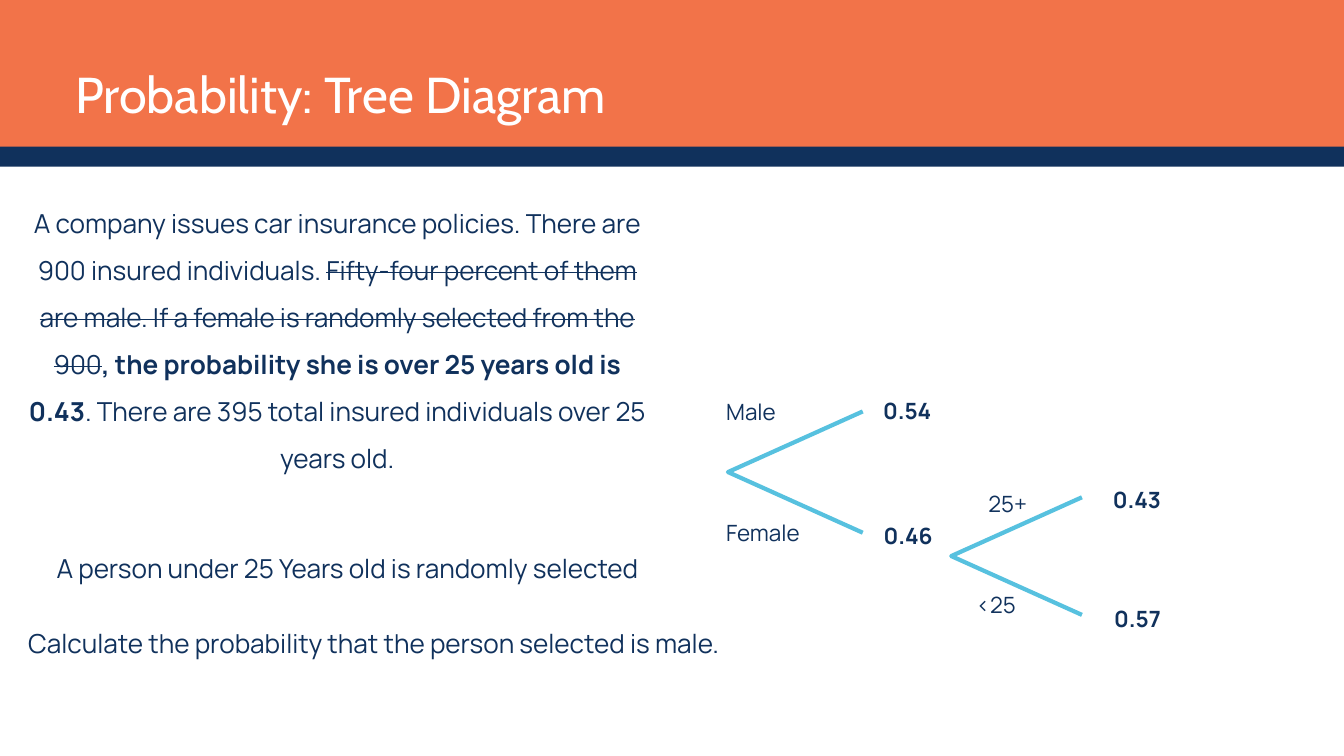
from dataclasses import dataclass

import pptx
import pptx.dml.color
import pptx.enum.shapes
import pptx.enum.text
import pptx.util

Pt = pptx.util.Pt
ALIGN = pptx.enum.text.PP_ALIGN


@dataclass(frozen=True)
class Theme:
    orange: str = "F27349"
    navy: str = "10315C"
    blue: str = "57C1DF"
    white: str = "FFFFFF"
    title_font: str = "Cabin"
    body_font: str = "Manrope"
    title_size: int = 54
    body_size: int = 28
    label_size: int = 24
    branch_width: float = 4.5


THEME = Theme()


def rgb(value):
    return pptx.dml.color.RGBColor.from_string(value)


def set_font(font, name, size, color, bold=False):
    font.name = name
    font.size = Pt(size)
    font.bold = bold
    font.color.rgb = rgb(color)


def add_text(page, place, spans, size, align=ALIGN.LEFT, spacing=None,
             inset=(0, 0)):
    """Place one paragraph; each span is (text, style)."""
    box = page.shapes.add_textbox(*(Pt(value) for value in place))
    frame = box.text_frame
    frame.word_wrap = True
    frame.margin_left = frame.margin_right = Pt(inset[0])
    frame.margin_top = frame.margin_bottom = Pt(inset[1])
    para = frame.paragraphs[0]
    para.alignment = align
    para.line_spacing = spacing
    set_font(para.font, THEME.body_font, size, THEME.navy,
             all(style == "bold" for _, style in spans))
    for text, style in spans:
        span = para.add_run()
        span.text = text
        if len(spans) > 1 and style == "bold":
            span.font.bold = True
        elif style == "strike":
            span._r.get_or_add_rPr().set("strike", "sngStrike")


def add_header(page, left, top, width):
    # Orange band with a navy rule along its foot
    for offset, height, color in ((0, 175, THEME.orange),
                                  (157, 21.6, THEME.navy)):
        band = page.shapes.add_shape(
            pptx.enum.shapes.MSO_SHAPE.RECTANGLE,
            Pt(left), Pt(top + offset), Pt(width), Pt(height))
        band.shadow.inherit = False
        band.fill.solid()
        band.fill.fore_color.rgb = rgb(color)
        band.line.fill.background()

    # Title, brought in front of the bands
    title = page.shapes.title
    page.shapes.element.append(title.element)
    title.left, title.top = Pt(left + 80.6), Pt(top + 38.2)
    title.width, title.height = Pt(1278), Pt(82)
    frame = title.text_frame
    frame.text = "Probability: Tree Diagram"
    frame.auto_size = pptx.enum.text.MSO_AUTO_SIZE.NONE
    frame.vertical_anchor = pptx.enum.text.MSO_ANCHOR.TOP
    frame.margin_left = frame.margin_right = 0
    frame.margin_top = frame.margin_bottom = 0
    para = frame.paragraphs[0]
    para.alignment = ALIGN.LEFT
    para.line_spacing = Pt(93.8)
    set_font(para.font, THEME.title_font, THEME.title_size, THEME.white)


def add_problem(page, left, top):
    # Known facts
    facts = [
        ("A company issues car insurance policies. There are 900 insured "
         "individuals. ", "plain"),
        ("Fifty-four percent of them are male. If a female is randomly "
         "selected from the 900", "strike"),
        (", the probability she is over 25 years old is 0.43", "bold"),
        (". There are 395 total insured individuals over 25 years old.",
         "plain"),
    ]
    add_text(page, (left, top, 662.4, 300), facts, THEME.body_size,
             ALIGN.CENTER, 1.5)

    # Condition and question
    add_text(page, (left - 18, top + 348.5, 725.8, 62),
             [("A person under 25 Years old is randomly selected ", "plain")],
             THEME.body_size, ALIGN.CENTER, Pt(71.4))
    add_text(page, (left, top + 467.3, 1360, 34),
             [("Calculate the probability that the person selected is male.",
               "plain")], THEME.body_size)


def add_fork(page, left, middle, width, labels):
    """Draw two branches from (left, middle), with labels offset from it."""
    rise = 0.45 * width
    builder = page.shapes.build_freeform(Pt(left + width), Pt(middle - rise))
    builder.add_line_segments([(Pt(left), Pt(middle)),
                               (Pt(left + width), Pt(middle + rise))],
                              close=False)
    fork = builder.convert_to_shape()
    fork.shadow.inherit = False
    fork.fill.background()
    fork.line.color.rgb = rgb(THEME.blue)
    fork.line.width = Pt(THEME.branch_width)

    for text, style, across, down in labels:
        add_text(page, (left + across, middle + down, 120, 36),
                 [(text, style)], THEME.label_size, inset=(7.2, 3.6))


def add_tree(page, left, top):
    add_fork(page, left, top + 65, 144.4, [
        ("Male", "plain", -9, -82.4),
        ("Female", "plain", -9, 47.2),
        ("0.54", "bold", 159, -83.9),
        ("0.46", "bold", 159.6, 50),
    ])
    add_fork(page, left + 239.2, top + 155, 140, [
        ("25+", "plain", 32.8, -74.5),
        ("<25", "plain", 19.8, 33.5),
        ("0.43", "bold", 166, -78.8),
        ("0.57", "bold", 167.4, 48.6),
    ])


def main():
    deck = pptx.Presentation()
    deck.slide_width, deck.slide_height = Pt(1440), Pt(810)
    page = deck.slides.add_slide(deck.slide_layouts.get_by_name("Title Only"))
    add_header(page, 0, 0, 1440)
    add_problem(page, 30.2, 205.2)
    add_tree(page, 780, 440.8)
    deck.save("out.pptx")


if __name__ == "__main__":
    main()
